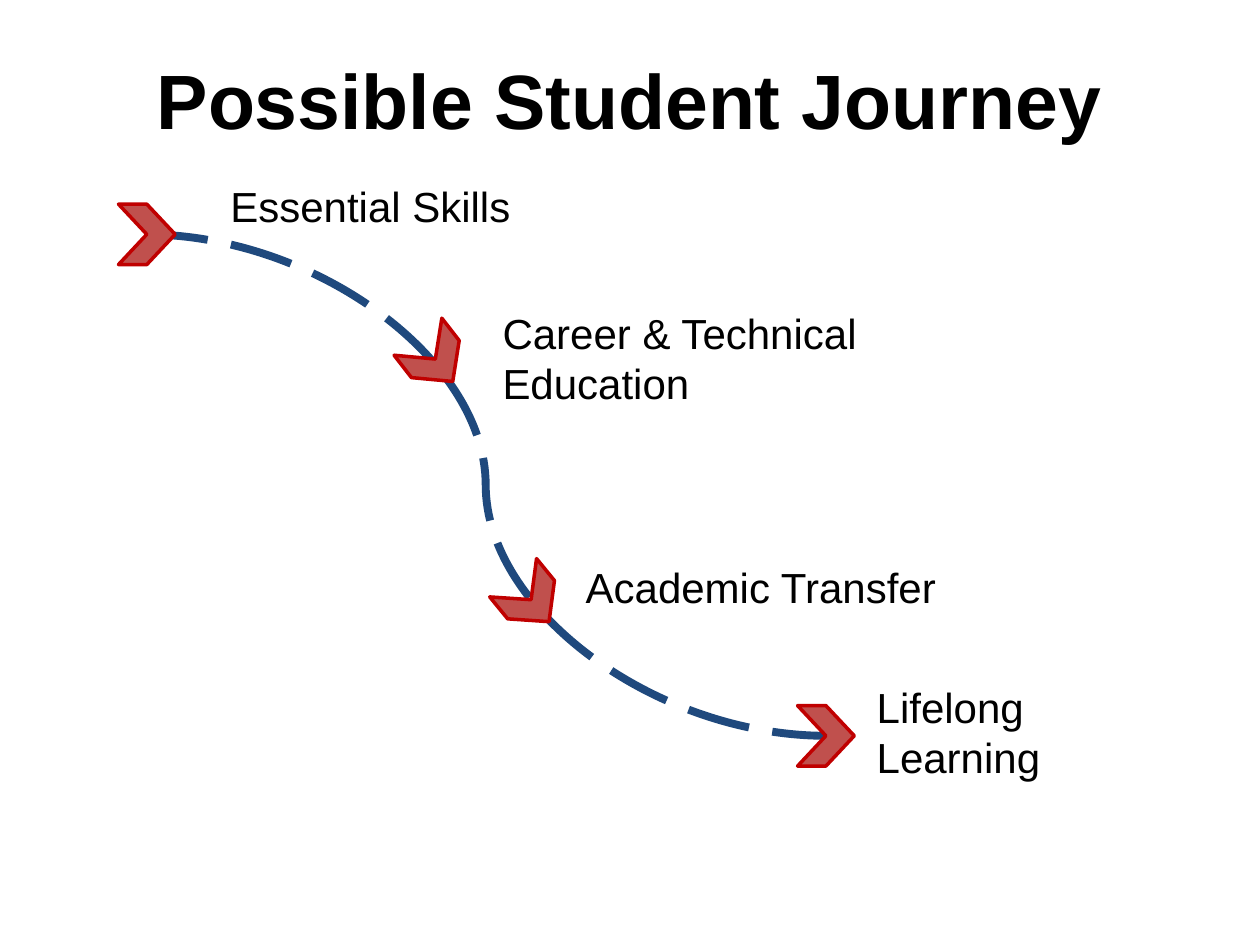
from lxml.etree import SubElement
from pptx import Presentation
from pptx.dml.color import RGBColor
from pptx.enum.dml import MSO_LINE
from pptx.enum.shapes import MSO_CONNECTOR, MSO_SHAPE
from pptx.enum.text import MSO_ANCHOR, MSO_AUTO_SIZE, PP_ALIGN
from pptx.oxml.ns import qn
from pptx.util import Inches, Pt

TITLE = "Possible Student Journey"
FONT = "Arial"
BLACK, WHITE, NAVY, RED, DARK_RED = "000000", "FFFFFF", "1F497D", "C0504D", "C00000"

# Stages: label, label box (left, top, width, height), fill
STAGES_BEHIND = [
    ("Essential Skills", (1.73, 1.38, 3.27, 0.5), None),
    ("Academic Transfer", (4.55, 4.41, 3.32, 0.5), WHITE),
    ("Career & Technical Education", (3.89, 2.39, 4.1, 0.91), WHITE),
]
STAGES_FRONT = [("Lifelong Learning", (6.86, 5.36, 2.5, 0.91), WHITE)]

# Road ends, and markers along it: left, top, rotation
ROAD = (1.15, 1.86, 6.56, 5.84)
MARKERS = [(0.94, 1.62, 0), (3.23, 2.61, 52.2), (3.99, 4.52, 50.7), (6.33, 5.6, 0)]
MARKER_SIZE = (0.45, 0.48)


def color(value):
    return RGBColor.from_string(value)


def inches(values):
    return [Inches(value) for value in values]


def write(frame, text, size, bold=False, align=PP_ALIGN.LEFT):
    frame.word_wrap = True
    frame.vertical_anchor = MSO_ANCHOR.TOP
    paragraph = frame.paragraphs[0]
    paragraph.alignment = align
    run = paragraph.add_run()
    run.text = text
    font = run.font
    font.name, font.size, font.bold = FONT, Pt(size), bold
    font.color.rgb = color(BLACK)


def add_labels(shapes, stages):
    for text, box, fill in stages:
        label = shapes.add_textbox(*inches(box))
        if fill:
            label.fill.solid()
            label.fill.fore_color.rgb = color(fill)
        write(label.text_frame, text, 24)


def add_road(shapes):
    road = shapes.add_connector(MSO_CONNECTOR.CURVE, *inches(ROAD))
    road.line.color.rgb = color(NAVY)
    road.line.width = Pt(4.5)
    road.line.dash_style = MSO_LINE.LONG_DASH
    SubElement(road._element.spPr, qn("a:effectLst"))


def add_markers(shapes):
    for left, top, rotation in MARKERS:
        marker = shapes.add_shape(MSO_SHAPE.CHEVRON, *inches((left, top) + MARKER_SIZE))
        marker.rotation = rotation
        marker.shadow.inherit = False
        marker.fill.solid()
        marker.fill.fore_color.rgb = color(RED)
        marker.line.color.rgb = color(DARK_RED)
        marker.line.width = Pt(2)


def main():
    presentation = Presentation()
    presentation.slide_width, presentation.slide_height = inches((10, 7.5))
    slide = presentation.slides.add_slide(presentation.slide_layouts[5])
    shapes = slide.shapes

    # Title
    title = shapes.title
    title.left, title.top, title.width, title.height = inches((0.5, 0.3, 9, 1.25))
    write(title.text_frame, TITLE, 44, bold=True, align=PP_ALIGN.CENTER)
    title.text_frame.auto_size = MSO_AUTO_SIZE.NONE
    title.text_frame.margin_top = Inches(0.12)

    # Journey: labels, road, then the markers on top
    add_labels(shapes, STAGES_BEHIND)
    add_road(shapes)
    add_labels(shapes, STAGES_FRONT)
    add_markers(shapes)
    presentation.save("out.pptx")


if __name__ == "__main__":
    main()
